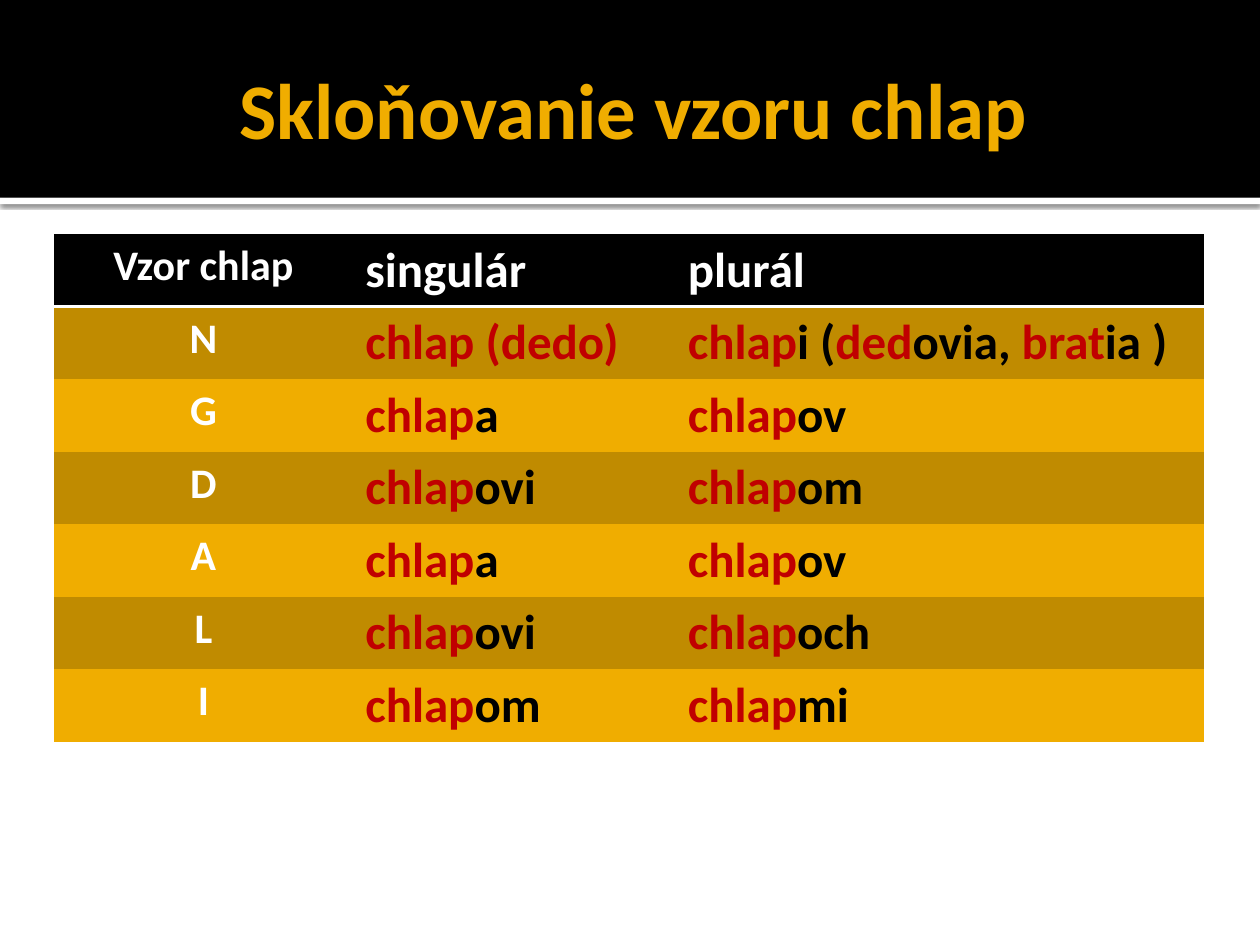
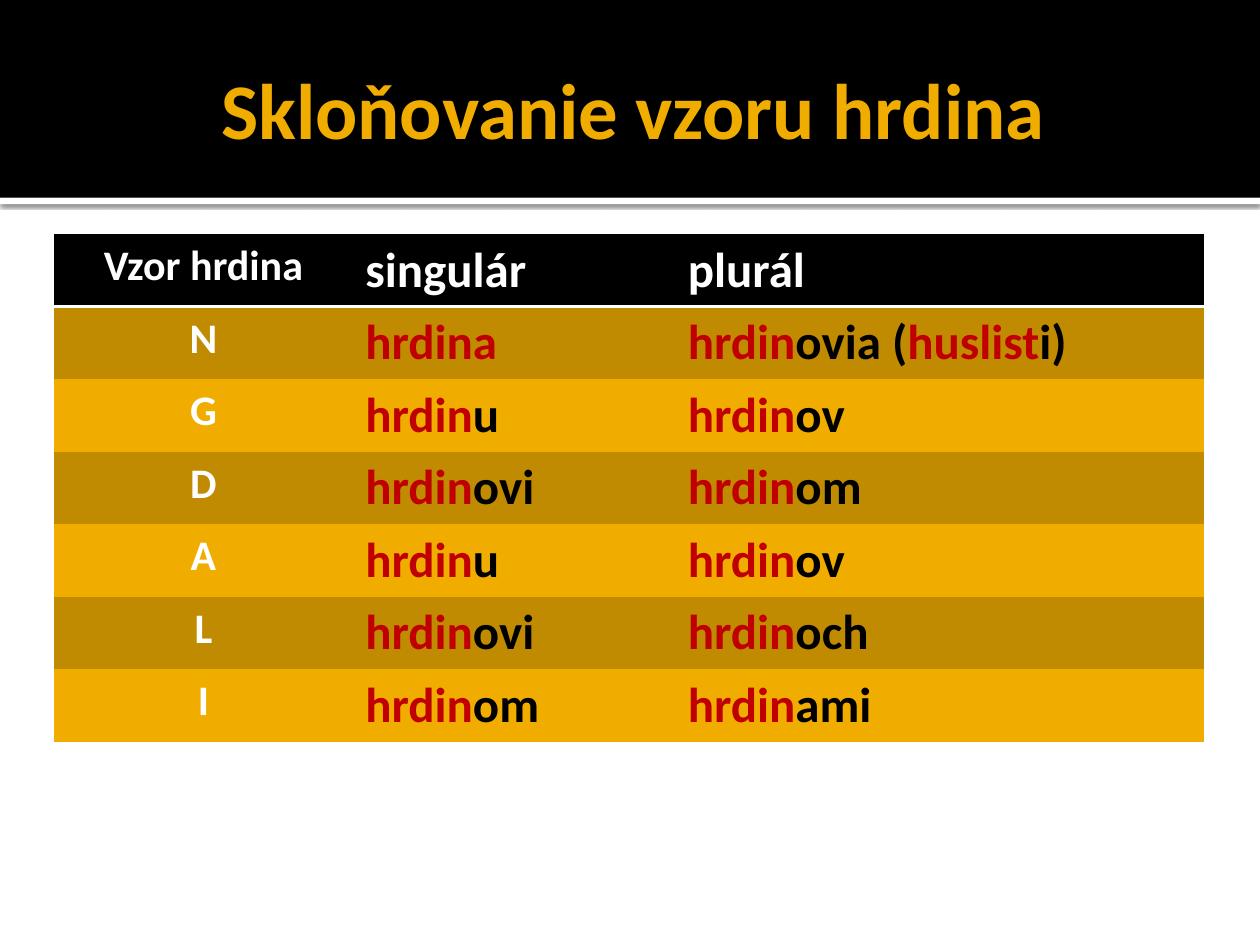
from itertools import cycle

from lxml import etree
from pptx import Presentation
from pptx.dml.color import RGBColor
from pptx.enum.shapes import MSO_SHAPE
from pptx.enum.text import MSO_ANCHOR, MSO_AUTO_SIZE, PP_ALIGN
from pptx.oxml import parse_xml
from pptx.oxml.ns import nsdecls, qn
from pptx.util import Inches, Pt

RECTANGLE = MSO_SHAPE.RECTANGLE
CENTER, LEFT = PP_ALIGN.CENTER, PP_ALIGN.LEFT
MIDDLE = MSO_ANCHOR.MIDDLE
NO_AUTOFIT = MSO_AUTO_SIZE.NONE

FONT = "Calibri"
BLACK, WHITE, GOLD, DARK_GOLD, RED = "000000", "FFFFFF", "F0AD00", "C08B00", "C00000"
SLIDE_WIDTH, SLIDE_HEIGHT = 10, 7.5
BAND_HEIGHT, STRIP_HEIGHT = 1.57, 0.05
TABLE_LEFT, TABLE_TOP, TABLE_HEIGHT = 0.43, 1.86, 3.97
COLUMN_WIDTHS = (2.37, 2.56, 4.2)
CASES = "NGDALI"
PLAIN_TABLE_STYLE = "{2D5ABB26-0587-4C30-8999-92F81FD0307C}"

# Stems and endings alternate, separated by "|".
CHLAP = (
    ("chlap (dedo)", "chlap|i (|ded|ovia, |brat|ia )"),
    ("chlap|a", "chlap|ov"),
    ("chlap|ovi", "chlap|om"),
    ("chlap|a", "chlap|ov"),
    ("chlap|ovi", "chlap|och"),
    ("chlap|om", "chlap|mi"),
)
HRDINA = (
    ("hrdina", "hrdin|ovia (|huslist|i)"),
    ("hrdin|u", "hrdin|ov"),
    ("hrdin|ovi", "hrdin|om"),
    ("hrdin|u", "hrdin|ov"),
    ("hrdin|ovi", "hrdin|och"),
    ("hrdin|om", "hrdin|ami"),
)


def rgb(color):
    return RGBColor.from_string(color)


def paint(fill, color):
    fill.solid()
    fill.fore_color.rgb = rgb(color)


def style_paragraph(paragraph, size, color, align):
    font = paragraph.font
    font.name, font.size, font.bold = FONT, Pt(size), True
    font.color.rgb = rgb(color)
    paragraph.alignment = align


def add_band(slide, top, height, color):
    band = slide.shapes.add_shape(
        RECTANGLE, 0, Inches(top), Inches(SLIDE_WIDTH), Inches(height))
    band.shadow.inherit = False
    paint(band.fill, color)
    band.line.fill.background()
    return band


def add_bands_to_layout(layout, slide):
    """Draw the header bands on the slide, then move them behind the layout's content."""
    strip = add_band(slide, BAND_HEIGHT, STRIP_HEIGHT, WHITE)
    effects = strip.element.spPr.find(qn("a:effectLst"))
    effects.append(parse_xml(
        f'<a:outerShdw {nsdecls("a")} blurRad="{Pt(2.5)}" dist="{Pt(0.8)}" '
        f'dir="5400000" rotWithShape="0"><a:srgbClr val="{BLACK}">'
        '<a:alpha val="60000"/></a:srgbClr></a:outerShdw>'))
    header = add_band(slide, 0, BAND_HEIGHT, BLACK)
    for position, band in enumerate((strip, header), start=2):
        layout.shapes.element.insert(position, band.element)


def set_title(slide, text):
    title = slide.shapes.title
    title.left, title.top = Inches(0.5), Inches(0.17)
    title.width, title.height = Inches(9), Inches(1.37)
    frame = title.text_frame
    frame.text = text
    frame.auto_size, frame.vertical_anchor = NO_AUTOFIT, MIDDLE
    frame.margin_left = Inches(0.1)
    frame.margin_right = frame.margin_top = frame.margin_bottom = Inches(0.05)
    style_paragraph(frame.paragraphs[0], 45, GOLD, CENTER)


def underline_cell(cell):
    properties = cell.fill and cell._tc.get_or_add_tcPr()
    properties.insert(0, parse_xml(
        f'<a:lnB {nsdecls("a")} w="{Pt(2)}"><a:solidFill>'
        f'<a:srgbClr val="{WHITE}"/></a:solidFill></a:lnB>'))


def fill_cell(cell, text, background, is_label, colors):
    """Write the "|"-separated parts of text in alternating colors."""
    paint(cell.fill, background)
    paragraph = cell.text_frame.paragraphs[0]
    size, align = (24, CENTER) if is_label else (28, LEFT)
    style_paragraph(paragraph, size, colors[0], align)
    for part, color in zip(text.split("|"), cycle(colors)):
        run = paragraph.add_run()
        run.text = part
        run.font.name, run.font.size, run.font.bold = FONT, Pt(size), True
        run.font.color.rgb = rgb(color)


def add_declension_table(slide, noun, forms):
    rows = [(f"Vzor {noun}", "singulár", "plurál")]
    rows += [(case, *pair) for case, pair in zip(CASES, forms)]
    frame = slide.shapes.add_table(
        len(rows), len(COLUMN_WIDTHS), Inches(TABLE_LEFT), Inches(TABLE_TOP),
        Inches(sum(COLUMN_WIDTHS)), Inches(TABLE_HEIGHT))
    table = frame.table
    frame.element.find(".//" + qn("a:tableStyleId")).text = PLAIN_TABLE_STYLE
    for column, width in zip(table.columns, COLUMN_WIDTHS):
        column.width = Inches(width)
    for r, row in enumerate(rows):
        background = BLACK if r == 0 else (GOLD, DARK_GOLD)[r % 2]
        for c, text in enumerate(row):
            colors = (WHITE,) if r == 0 or c == 0 else (RED, BLACK)
            fill_cell(table.cell(r, c), text, background, c == 0, colors)
            if r == 0:
                underline_cell(table.cell(r, c))


def main():
    prs = Presentation()
    prs.slide_width, prs.slide_height = Inches(SLIDE_WIDTH), Inches(SLIDE_HEIGHT)
    layout = prs.slide_layouts.get_by_name("Title Only")
    slides = [prs.slides.add_slide(layout) for _ in range(2)]
    add_bands_to_layout(layout, slides[0])
    for slide, noun, forms in zip(slides, ("chlap", "hrdina"), (CHLAP, HRDINA)):
        set_title(slide, f"Skloňovanie vzoru {noun}")
        add_declension_table(slide, noun, forms)
    etree.cleanup_namespaces(layout.shapes.element)
    prs.save("out.pptx")


if __name__ == "__main__":
    main()
